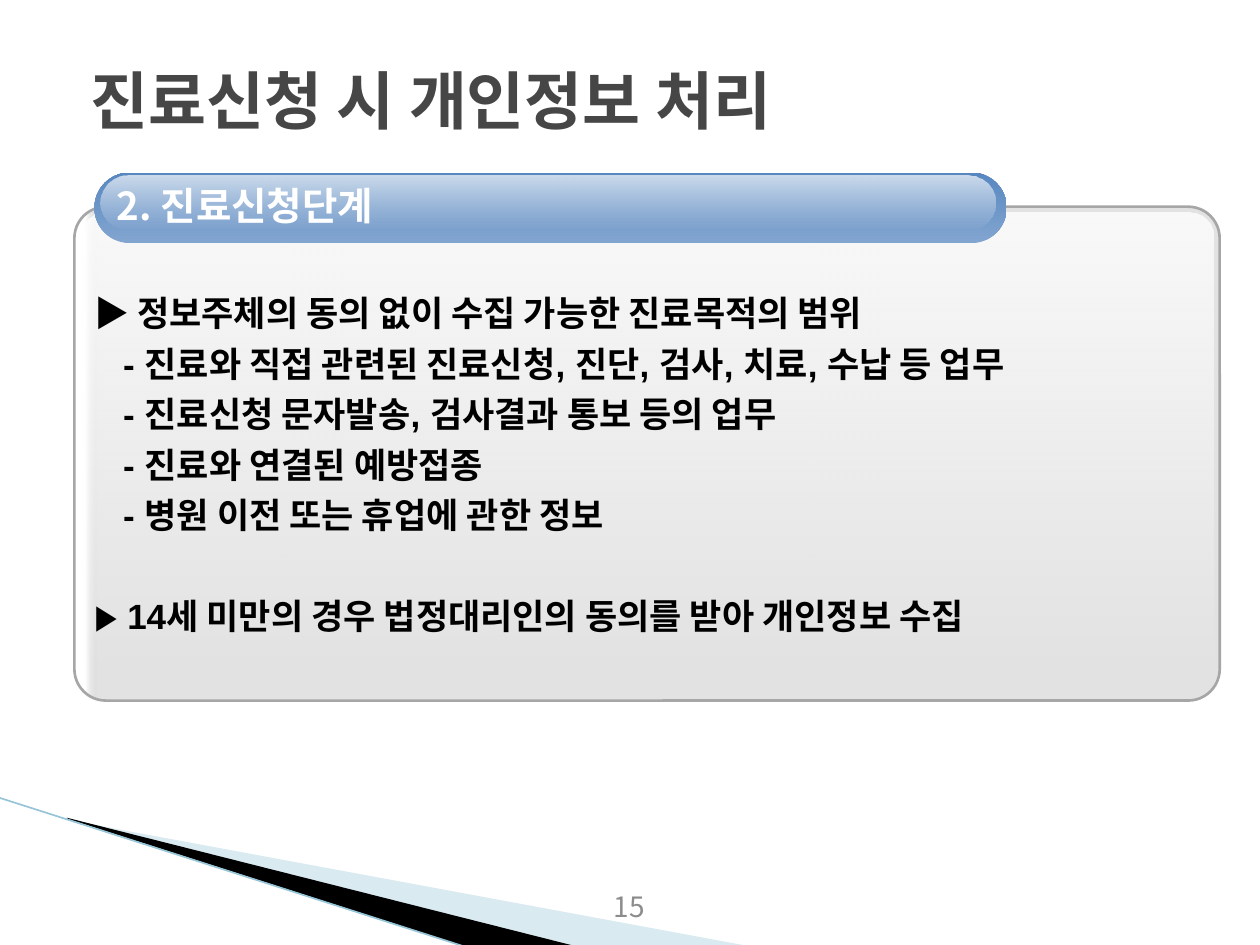
from lxml import etree
from pptx import Presentation
from pptx.dml.color import RGBColor
from pptx.enum import shapes, text
from pptx.oxml import ns
from pptx.util import Inches, Pt

WHITE = RGBColor(0xFF, 0xFF, 0xFF)
BLACK = RGBColor(0, 0, 0)
PALE = RGBColor(0xA0, 0xCB, 0xDC)
TEAL = RGBColor(0x97, 0xC5, 0xD8)
SILVER = RGBColor(0xBF, 0xBF, 0xBF)
EDGE = RGBColor(0xA6, 0xA6, 0xA6)
LIGHT = RGBColor(0x82, 0xA5, 0xD0)
BLUE = RGBColor(0x58, 0x87, 0xC0)
DARK = RGBColor(0x46, 0x46, 0x46)
GREY = RGBColor(0x8C, 0x8C, 0x8C)
SANS = "Noto Sans CJK KR"

TITLE = "진료신청 시 개인정보 처리"
HEAD = "2. 진료신청단계"
PAGE = "15"
BODY = [
    (0, "▶ 정보주체의 동의 없이 수집 가능한 진료목적의 범위"),
    (1, "- 진료와 직접 관련된 진료신청, 진단, 검사, 치료, 수납 등 업무"),
    (1, "- 진료신청 문자발송, 검사결과 통보 등의 업무"),
    (1, "- 진료와 연결된 예방접종"),
    (1, "- 병원 이전 또는 휴업에 관한 정보"),
    (0, "▶ 14세 미만의 경우 법정대리인의 동의를 받아 개인정보 수집"),
]
WEDGES = [
    ([(0.55, 6.51), (5.95, 7.51), (4.56, 7.51), (0.55, 6.5)], PALE, 40),
    ([(0.53, 6.49), (4.57, 7.51), (3.72, 7.52), (0.54, 6.5)], BLACK, 100),
]
PLATES = [
    ((0.59, 1.64, 9.09, 3.92), 0.064, 0, [(1, WHITE, 100), (2, SILVER, 45)], EDGE),
    ((0.65, 1.69, 8.98, 3.69), 0.051, 90, [(0, WHITE, 81), (100, WHITE, 0)], None),
]
PILLS = [
    ((0.75, 1.37, 7.24, 0.56), 0.5, 270, [(0, LIGHT, 100), (100, BLUE, 100)], None),
    ((0.8, 1.39, 7.1, 0.43), 0.5, 90, [(0, WHITE, 71), (100, WHITE, 0)], None),
]


def sub(top, tag, **attrs):
    return etree.SubElement(top, ns.qn(tag), {k: str(v) for k, v in attrs.items()})


def fade(color, alpha):
    if alpha < 100:
        sub(color, "a:alpha", val=alpha * 1000)


def wedge(slide, dots, color, alpha):
    pts = [(Inches(x), Inches(y)) for x, y in dots]
    pen = slide.shapes.build_freeform(*pts[0])
    pen.add_line_segments(pts[1:], close=True)
    shape = pen.convert_to_shape()
    shape.shadow.inherit = False
    shape.fill.solid()
    shape.fill.fore_color.rgb = color
    fade(shape.fill._xPr.find(".//" + ns.qn("a:srgbClr")), alpha)
    shape.line.fill.background()


def plate(slide, box, bend, angle, stops, edge):
    shape = slide.shapes.add_shape(shapes.MSO_SHAPE.ROUNDED_RECTANGLE, *map(Inches, box))
    shape.adjustments[0] = bend
    shape.shadow.inherit = False
    if edge is None:
        shape.line.fill.background()
    else:
        shape.line.color.rgb = edge
        shape.line.width = Pt(1.5)
    grad = etree.Element(ns.qn("a:gradFill"), rotWithShape="1")
    marks = sub(grad, "a:gsLst")
    for pos, color, alpha in stops:
        mark = sub(marks, "a:gs", pos=pos * 1000)
        fade(sub(mark, "a:srgbClr", val=color), alpha)
    sub(grad, "a:lin", ang=angle * 60000, scaled=0)
    shape._element.spPr.find(ns.qn("a:prstGeom")).addnext(grad)


def label(slide, box, lines, size, color, font=SANS, bold=True, mid=True):
    frame = slide.shapes.add_textbox(*map(Inches, box)).text_frame
    frame.word_wrap = True
    if mid:
        frame.vertical_anchor = text.MSO_ANCHOR.MIDDLE
    frame.text = "\n".join(lines)
    for para in frame.paragraphs:
        for run in para.runs:
            face = run.font
            face.size, face.bold, face.name = Pt(size), bold, font
            face.color.rgb = color
            sub(run._r.get_or_add_rPr(), "a:ea", typeface=SANS)
    return frame


def main():
    deck = Presentation()
    deck.slide_width, deck.slide_height = Inches(10), Inches(7.5)
    slide = deck.slides.add_slide(deck.slide_layouts[6])

    for item in WEDGES:
        wedge(slide, *item)
    ends = map(Inches, (-0.01, 6.33, 3.71, 7.52))
    line = slide.shapes.add_connector(shapes.MSO_CONNECTOR.STRAIGHT, *ends)
    line.line.color.rgb = TEAL
    line.line.width = Pt(0.95)
    sub(line._element.spPr, "a:effectLst")

    for item in PLATES:
        plate(slide, *item)
    body = label(slide, (0.65, 2.2, 9.07, 3.28), [t for _, t in BODY],
                 20, BLACK, "Arial", mid=False)
    for para, (level, _) in zip(body.paragraphs, BODY):
        para.line_spacing = 1.2
        if level:
            para._p.get_or_add_pPr().set("marL", str(Inches(0.23)))
    body.paragraphs[-1].space_before = Pt(29)

    for item in PILLS:
        plate(slide, *item)
    head = label(slide, (0.83, 1.48, 6.9, 0.38), [HEAD], 22, WHITE)
    head.paragraphs[0].line_spacing = Pt(20)

    page = label(slide, (3.83, 7.01, 2.33, 0.4), [PAGE], 16, GREY, bold=False, mid=False)
    page.paragraphs[0].alignment = text.PP_ALIGN.CENTER
    title = label(slide, (0.51, 0.47, 9, 0.63), [TITLE], 36, DARK)
    title.margin_left = Inches(0.21)

    deck.save("out.pptx")


if __name__ == "__main__":
    main()
